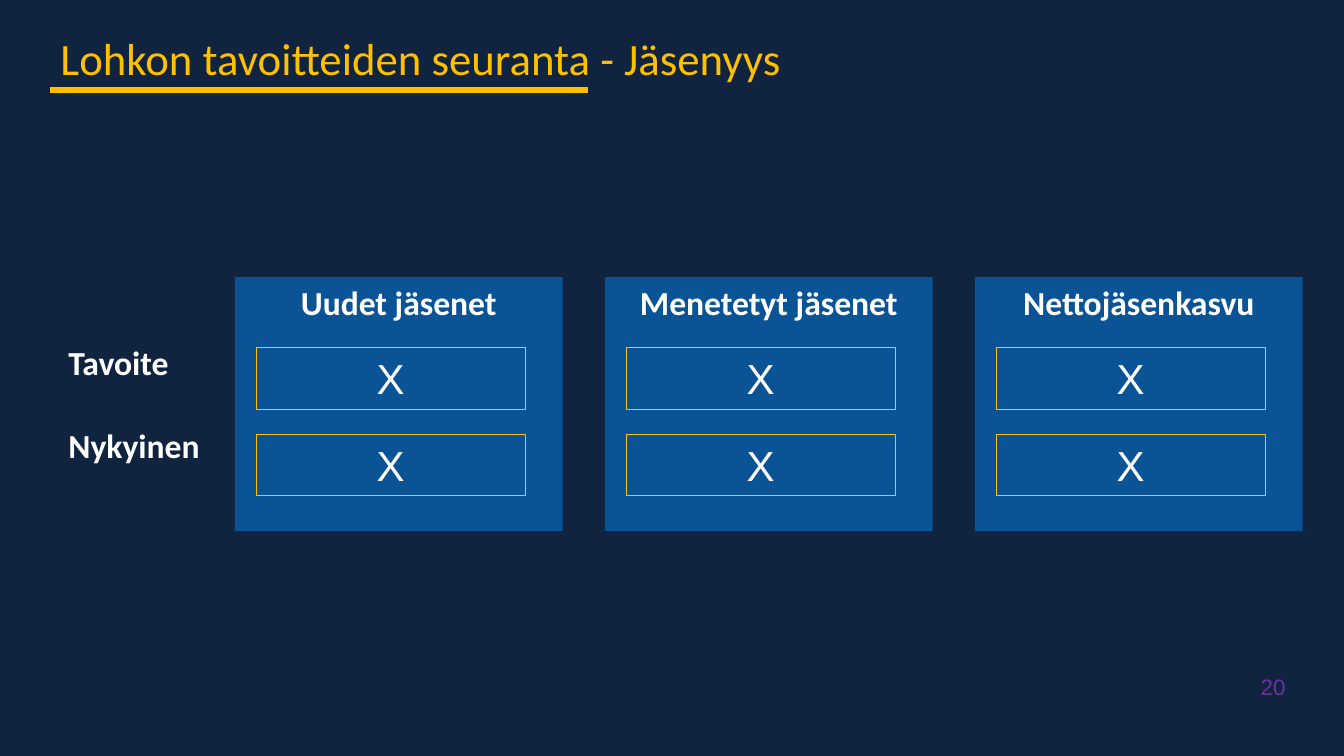
from pptx import Presentation
from pptx.dml.color import RGBColor
from pptx.enum.shapes import MSO_CONNECTOR, MSO_SHAPE
from pptx.enum.text import MSO_ANCHOR as Anchor, MSO_AUTO_SIZE as AutoSize, PP_ALIGN as Align
from pptx.oxml.ns import qn
from pptx.util import Inches, Pt

NAVY, BLUE, GOLD, WHITE, PURPLE = "10233F", "0A5496", "FFC000", "FFFFFF", "7030A0"
ROWS = ["Tavoite", "Nykyinen"]
CARDS = [
    ("Uudet jäsenet", ["X", "X"]),
    ("Menetetyt jäsenet", ["X", "X"]),
    ("Nettojäsenkasvu", ["X", "X"]),
]


def color(value):
    return RGBColor.from_string(value)


def write(shape, text, size, font="Calibri", fill=WHITE, bold=False,
          align=Align.LEFT, anchor=Anchor.TOP):
    frame = shape.text_frame
    frame.text = text
    frame.word_wrap = True
    frame.auto_size = AutoSize.NONE
    frame.vertical_anchor = anchor
    paragraph = frame.paragraphs[0]
    paragraph.alignment = align
    run_font = paragraph.runs[0].font
    run_font.name, run_font.size, run_font.bold = font, Pt(size), bold
    run_font.color.rgb = color(fill)


def add_text(slide, left, top, width, height, text, size, **style):
    box = slide.shapes.add_textbox(*map(Inches, (left, top, width, height)))
    write(box, text, size, **style)
    return box


def add_box(shapes, left, top, width, height, fill=None, line=None):
    box = shapes.add_shape(MSO_SHAPE.RECTANGLE, *map(Inches, (left, top, width, height)))
    box.shadow.inherit = False
    if fill:
        box.fill.solid()
        box.fill.fore_color.rgb = color(fill)
    else:
        box.fill.background()
    if line:
        box.line.color.rgb = color(line)
        box.line.width = Pt(0.75)
    else:
        box.line.fill.background()
    return box


def add_heading(slide, left, top, width, height, text):
    title = slide.shapes.title
    title.left, title.top, title.width, title.height = map(Inches, (left, top, width, height))
    write(title, text, 32, fill=GOLD)

    # Underline along the foot of the title
    bottom = top + height
    underline = slide.shapes.add_connector(
        MSO_CONNECTOR.STRAIGHT, *map(Inches, (left, bottom, left + 5.33, bottom)))
    underline.line.color.rgb = color(GOLD)
    underline.line.width = Pt(4.5)
    properties = underline._element.spPr
    properties.append(properties.makeelement(qn("a:effectLst"), {}))


def add_row_labels(slide, left, top, width, height, pitch):
    for index, label in enumerate(ROWS):
        add_text(slide, left, top + index * pitch, width, height, label, 24, bold=True)


def add_card(slide, left, top, width, height, heading, values):
    shapes = slide.shapes.add_group_shape().shapes
    panel = add_box(shapes, left, top, width, height, fill=BLUE)
    write(panel, heading, 24, bold=True, align=Align.CENTER)

    # Value boxes
    for index, value in enumerate(values):
        box = add_box(shapes, left + 0.21, top + 0.7 + index * 0.86, 2.67, 0.61, line=GOLD)
        write(box, value, 30, font="Arial", align=Align.CENTER)


def add_page_number(slide, left, top, width, height, number):
    box = add_text(slide, left, top, width, height, number, 16, font="Arial",
                   fill=PURPLE, align=Align.RIGHT, anchor=Anchor.MIDDLE)
    box.text_frame.margin_left = box.text_frame.margin_right = 0


def main():
    presentation = Presentation()
    presentation.slide_width, presentation.slide_height = Inches(13.33), Inches(7.5)
    slide = presentation.slides.add_slide(presentation.slide_layouts[5])
    slide.background.fill.solid()
    slide.background.fill.fore_color.rgb = color(NAVY)

    add_heading(slide, 0.5, 0.25, 7.67, 0.64, "Lohkon tavoitteiden seuranta - Jäsenyys")
    add_row_labels(slide, 0.58, 3.34, 1.75, 0.5, pitch=0.83)
    for index, (heading, values) in enumerate(CARDS):
        add_card(slide, 2.33 + index * 3.67, 2.75, 3.25, 2.52, heading, values)
    add_page_number(slide, 12.14, 6.63, 0.61, 0.37, "20")

    presentation.save("out.pptx")


if __name__ == "__main__":
    main()
